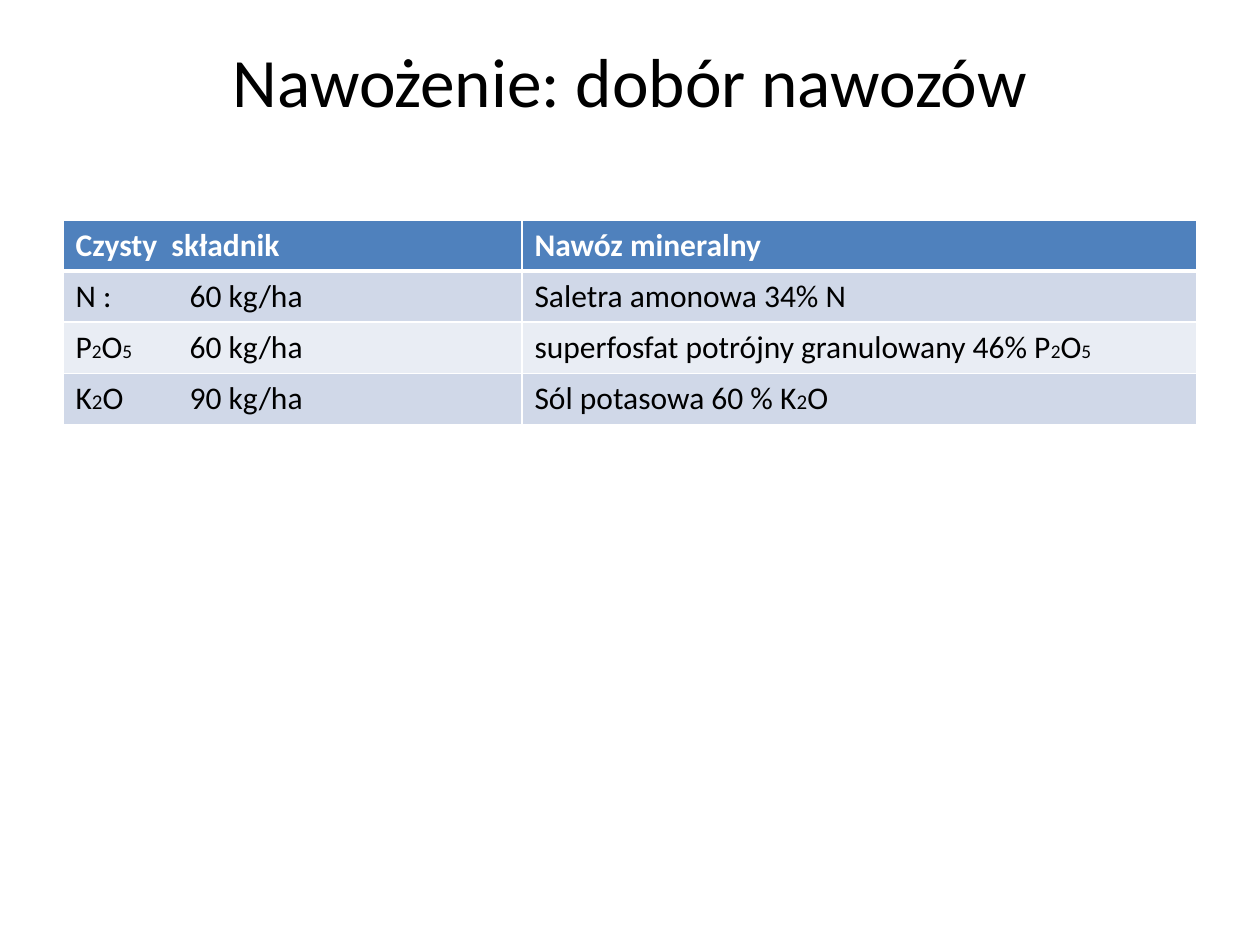
from dataclasses import dataclass

from lxml.etree import SubElement
from pptx import Presentation
from pptx.dml.color import RGBColor
from pptx.enum.text import MSO_ANCHOR as Anchor, PP_ALIGN as Align
from pptx.oxml.ns import qn
from pptx.slide import Slide
from pptx.util import Emu, Pt

EMU_PER_PX = 914400 / 126
HEADER = ("Czysty  składnik", "Nawóz mineralny")
NUTRIENTS = (
    ("N :\t60 kg/ha", "Saletra amonowa 34% N", 11),
    ("P_2_O_5_\t60 kg/ha", "superfosfat potrójny granulowany 46% P_2_O_5_", 11),
    ("K_2_O\t90 kg/ha", "Sól potasowa 60 % K_2_O", 12),
)


def px(length):
    return Emu(round(length * EMU_PER_PX))


def color(hex_code):
    return RGBColor.from_string(hex_code)


def write(paragraph, text, *, font, size, ink="000000", bold=False,
          small=11, align=Align.LEFT):
    """Write text into a paragraph; parts between underscores get the small size."""
    paragraph.alignment = align
    for index, part in enumerate(text.split("_")):
        if part:
            run = paragraph.add_run()
            run.text = part
            run.font.name = font
            run.font.size = Pt(small if index % 2 else size)
            run.font.bold = bold
            run.font.color.rgb = color(ink)


def add_tab(paragraph, position):
    stops = SubElement(paragraph._p.get_or_add_pPr(), qn("a:tabLst"))
    SubElement(stops, qn("a:tab"), pos=str(px(position)), algn="l")


def add_border(cell, side, width, hex_code):
    line = SubElement(cell._tc.get_or_add_tcPr(), qn(f"a:ln{side}"), w=str(Pt(width)))
    SubElement(SubElement(line, qn("a:solidFill")), qn("a:srgbClr"), val=hex_code)


@dataclass
class SlideBuilder:
    """Holds the style and the current slide."""
    slide: Slide
    font: str = "Calibri"
    title_size: float = 39.6
    table_size: int = 18
    header_fill: str = "4F81BD"
    band_fills: tuple = ("D0D8E8", "E9EDF4")
    rule: str = "FFFFFF"

    def title(self, text, left, top, width, height):
        heading = self.slide.shapes.title
        heading.left, heading.top = px(left), px(top)
        heading.width, heading.height = px(width), px(height)
        frame = heading.text_frame
        frame.vertical_anchor = Anchor.TOP
        frame.margin_top = 0
        write(frame.paragraphs[0], text, font=self.font, size=self.title_size,
              align=Align.CENTER)

    def cell(self, cell, text, fill, top=1, bottom=1, **text_format):
        for side, width in zip("LRTB", (1, 1, top, bottom)):
            add_border(cell, side, width, self.rule)
        cell.fill.solid()
        cell.fill.fore_color.rgb = color(fill)
        paragraph = cell.text_frame.paragraphs[0]
        write(paragraph, text, font=self.font, size=self.table_size, **text_format)
        if "\t" in text:
            add_tab(paragraph, 114)

    def table(self, header, rows, left, top, widths, row_height):
        row_count = len(rows) + 1
        table = self.slide.shapes.add_table(
            row_count, len(widths), px(left), px(top),
            px(sum(widths)), px(row_height * row_count)).table
        for column, width in zip(table.columns, widths):
            column.width = px(width)
        for row in table.rows:
            row.height = px(row_height)
        for column, label in enumerate(header):
            self.cell(table.cell(0, column), label, self.header_fill, bottom=3,
                      ink="FFFFFF", bold=True)
        for number, (*texts, small) in enumerate(rows, 1):
            for column, text in enumerate(texts):
                self.cell(table.cell(number, column), text,
                          self.band_fills[(number - 1) % 2],
                          top=3 if number == 1 else 1, small=small)


def main():
    deck = Presentation()
    deck.slide_width, deck.slide_height = px(1260), px(945)
    builder = SlideBuilder(deck.slides.add_slide(deck.slide_layouts[5]))
    builder.title("Nawożenie: dobór nawozów", 63, 38, 1134, 158)
    builder.table(HEADER, NUTRIENTS, 63, 220, (459, 675), 51)
    deck.save("out.pptx")


if __name__ == "__main__":
    main()
